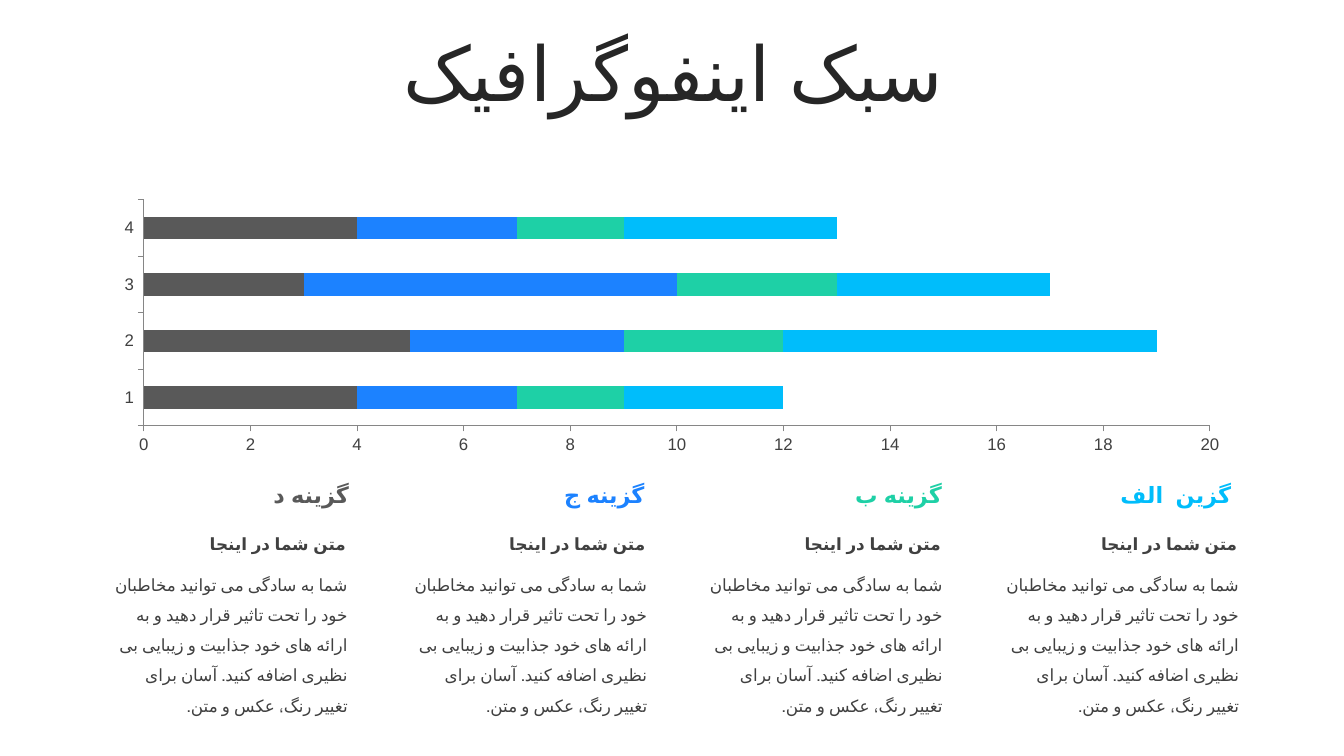
import dataclasses

import pptx
import pptx.chart.data
import pptx.dml.color
import pptx.enum.chart
import pptx.enum.lang
import pptx.enum.text
import pptx.util

PX = 9144  # one px is a hundredth of an inch
ALIGN = pptx.enum.text.PP_ALIGN
ANCHOR = pptx.enum.text.MSO_ANCHOR
FIT = pptx.enum.text.MSO_AUTO_SIZE
FARSI = pptx.enum.lang.MSO_LANGUAGE_ID.FARSI


@dataclasses.dataclass(frozen=True)
class Theme:
    face: str = "Arial"
    dark: str = "262626"
    text: str = "404040"
    axis: str = "868686"
    grey: str = "595959"
    blue: str = "1C82FF"
    green: str = "1ED0A6"
    cyan: str = "00BDFB"
    title: int = 54
    head: int = 16
    body: int = 12


THEME = Theme()

LEAD = "متن شما در اینجا"
BODY = ("شما به سادگی می توانید مخاطبان خود را تحت تاثیر قرار دهید و به "
        "ارائه های خود جذابیت و زیبایی بی نظیری اضافه کنید. "
        "آسان برای تغییر رنگ، عکس و متن.")

# Label, colour, column left, label left, label width
OPTIONS = [
    ("گزینه د", THEME.grey, 101, 105, 251),
    ("گزینه ج", THEME.blue, 398, 397, 252),
    ("گزینه ب", THEME.green, 691, 690, 254),
    ("گزین  الف", THEME.cyan, 985, 985, 246),
]

SERIES = [
    ("Series 1", (4, 5, 3, 4), THEME.grey),
    ("Series 2", (3, 4, 7, 3), THEME.blue),
    ("Series 3", (2, 3, 3, 2), THEME.green),
    ("Series 4", (3, 7, 4, 4), THEME.cyan),
]


def px(*nums):
    return [pptx.util.Emu(num * PX) for num in nums]


def rgb(code):
    return pptx.dml.color.RGBColor.from_string(code)


def apply(item, form):
    for name, value in form.items():
        setattr(item, name, value)


def style(font, size, tint, bold=False):
    apply(font, {"size": pptx.util.Pt(size), "name": THEME.face, "bold": bold})
    font.color.rgb = rgb(tint)


def write(frame, words, size, tint, bold=False, **form):
    """Fill a frame with one right-to-left paragraph."""
    para = frame.paragraphs[0]
    apply(para, form)
    para._p.get_or_add_pPr().set("rtl", "1")
    run = para.add_run()
    run.text = words
    style(run.font, size, tint, bold)
    run.font.language_id = FARSI


def label(shapes, box, words, size, tint, bold=False, **form):
    frame = shapes.add_textbox(*px(*box)).text_frame
    apply(frame, {"word_wrap": True, "auto_size": FIT.SHAPE_TO_FIT_TEXT})
    write(frame, words, size, tint, bold, alignment=ALIGN.RIGHT, **form)


def head(slide, words):
    title = slide.shapes.title
    spots = px(35, 37, 1266, 79)
    apply(title, dict(zip(("left", "top", "width", "height"), spots)))
    apply(title.text_frame, {"word_wrap": True, "auto_size": FIT.NONE,
                             "vertical_anchor": ANCHOR.MIDDLE})
    write(title.text_frame, words, THEME.title, THEME.dark,
          alignment=ALIGN.CENTER, line_spacing=0.9,
          space_before=pptx.util.Pt(10))


def bars(slide):
    data = pptx.chart.data.CategoryChartData()
    data.categories = ["1", "2", "3", "4"]
    for name, values, _ in SERIES:
        data.add_series(name, values)
    kind = pptx.enum.chart.XL_CHART_TYPE.BAR_STACKED
    chart = slide.shapes.add_chart(kind, *px(101, 193, 1131, 262), data).chart
    apply(chart, {"has_legend": False, "has_title": False})
    style(chart.font, THEME.body, THEME.text)

    # Bars
    plot = chart.plots[0]
    apply(plot, {"gap_width": 150, "overlap": 100, "vary_by_categories": False})
    for series, (_, _, tint) in zip(plot.series, SERIES):
        series.format.fill.solid()
        series.format.fill.fore_color.rgb = rgb(tint)

    # Axes
    marks = pptx.enum.chart.XL_TICK_MARK
    for axis in (chart.category_axis, chart.value_axis):
        apply(axis, {"has_major_gridlines": False,
                     "major_tick_mark": marks.OUTSIDE,
                     "minor_tick_mark": marks.NONE})
        style(axis.tick_labels.font, THEME.body, THEME.text)
        axis.format.line.color.rgb = rgb(THEME.axis)
        axis.format.line.width = pptx.util.Pt(0.75)
    apply(chart.value_axis, {"minimum_scale": 0, "maximum_scale": 20,
                             "major_unit": 2})


def option(slide, name, tint, left, start, width):
    label(slide.shapes, (start, 472, width, 37), name, THEME.head, tint, True)
    group = slide.shapes.add_group_shape()
    label(group.shapes, (left, 555, 254, 129), BODY, THEME.body, THEME.text,
          line_spacing=1.5)
    label(group.shapes, (left, 525, 252, 30), LEAD, THEME.body, THEME.text, True)


def main():
    deck = pptx.Presentation()
    deck.slide_width, deck.slide_height = px(1333, 750)
    slide = deck.slides.add_slide(deck.slide_layouts[5])
    head(slide, "سبک اینفوگرافیک")
    bars(slide)
    for item in OPTIONS:
        option(slide, *item)
    deck.save("out.pptx")


if __name__ == "__main__":
    main()
